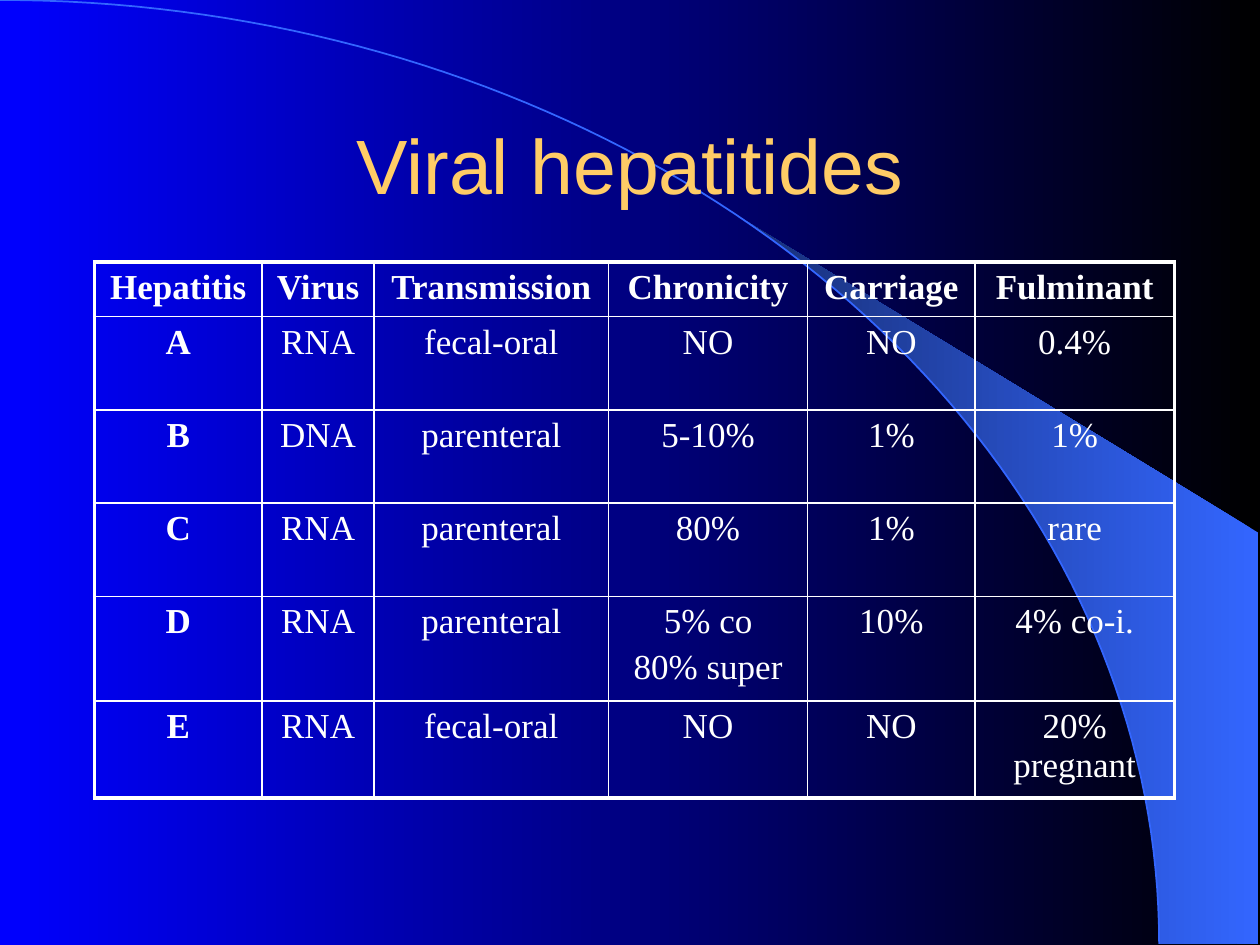
import math

import pptx
import pptx.util
from lxml import etree
from pptx.dml.color import RGBColor
from pptx.enum.text import MSO_ANCHOR, PP_ALIGN
from pptx.oxml.ns import qn
from pptx.util import Inches, Pt

BLACK = RGBColor(0, 0, 0)
BLUE = RGBColor(0, 0, 0xFF)
SKY = RGBColor(0x33, 0x66, 0xFF)
NAVY = RGBColor(0x18, 0x2F, 0x76)
GOLD = RGBColor(0xFF, 0xCC, 0x66)
WHITE = RGBColor(0xFF, 0xFF, 0xFF)

WIDE, HIGH = 9.2, 7.49  # radii of the big curve
TIP = math.asin(5.89 / WIDE)  # angle at which the beam leaves the curve

COLS = [1.33, 0.89, 1.86, 1.58, 1.33, 1.58]
ROWS = [0.43, 0.74, 0.74, 0.74, 0.83, 0.77]
DATA = [
    ["Hepatitis", "Virus", "Transmission", "Chronicity", "Carriage", "Fulminant"],
    ["A", "RNA", "fecal-oral", "NO", "NO", "0.4%"],
    ["B", "DNA", "parenteral", "5-10%", "1%", "1%"],
    ["C", "RNA", "parenteral", "80%", "1%", "rare"],
    ["D", "RNA", "parenteral", "5% co\n80% super", "10%", "4% co-i."],
    ["E", "RNA", "fecal-oral", "NO", "NO", "20% pregnant"],
]


def curve(start, steps):
    """Points on the ellipse from an angle off the top to its right end."""
    turns = [start + (math.pi / 2 - start) * i / steps for i in range(steps + 1)]
    return [(WIDE * math.sin(t), HIGH * (1 - math.cos(t))) for t in turns]


class Deck:
    """Holds the style and the current slide."""

    head = "Arial"
    body = "Times New Roman"
    inset = Inches(0.05)

    def __init__(self):
        self.file = pptx.Presentation()
        self.file.slide_width = Inches(10)
        self.file.slide_height = Inches(7.5)
        self.slide = self.file.slides.add_slide(self.file.slide_layouts[6])

    def fade(self, fill, right, left):
        fill.gradient()
        fill.gradient_angle = 180
        for stop, color in zip(fill.gradient_stops, (right, left)):
            stop.color.rgb = color

    def trace(self, points, close):
        spots = [(Inches(x), Inches(y)) for x, y in points]
        form = self.slide.shapes.build_freeform(*spots[0], scale=1.0)
        form.add_line_segments(spots[1:], close=close)
        shape = form.convert_to_shape()
        shape.shadow.inherit = False
        return shape

    def beam(self, points):
        shape = self.trace(points, True)
        self.fade(shape.fill, SKY, NAVY)
        shape.line.fill.background()

    def arc(self, points):
        shape = self.trace(points, False)
        shape.fill.background()
        shape.line.color.rgb = SKY
        shape.line.width = Pt(1)

    def style(self, para, name, size, color, bold=False):
        para.alignment = PP_ALIGN.CENTER
        font = para.font
        font.name, font.size, font.bold = name, Pt(size), bold
        font.color.rgb = color

    def pad(self, item):
        item.margin_left = item.margin_right = self.inset
        item.margin_top = item.margin_bottom = self.inset

    def title(self, text, *box):
        frame = self.slide.shapes.add_textbox(*map(Inches, box)).text_frame
        frame.word_wrap = True
        frame.vertical_anchor = MSO_ANCHOR.MIDDLE
        self.pad(frame)
        frame.text = text
        self.style(frame.paragraphs[0], self.head, 44, GOLD)

    def edge(self, cell, outer):
        """Rule all four sides, thicker where the side is on the outside."""
        props = cell._tc.get_or_add_tcPr()
        for i, (side, thick) in enumerate(zip("LRTB", outer)):
            line = etree.Element(qn(f"a:ln{side}"), w=str(Pt(2.25 if thick else 1)))
            fill = etree.SubElement(line, qn("a:solidFill"))
            etree.SubElement(fill, qn("a:srgbClr"), val=str(WHITE))
            props.insert(i, line)

    def table(self, data, left, top, cols, rows):
        box = map(Inches, (left, top, sum(cols), sum(rows)))
        grid = self.slide.shapes.add_table(len(rows), len(cols), *box).table
        grid.first_row = grid.horz_banding = False
        for col, width in zip(grid.columns, cols):
            col.width = Inches(width)
        for row, height in zip(grid.rows, rows):
            row.height = Inches(height)
        for r, line in enumerate(data):
            for c, text in enumerate(line):
                cell = grid.cell(r, c)
                cell.text = text
                cell.fill.background()
                self.pad(cell)
                for para in cell.text_frame.paragraphs:
                    self.style(para, self.body, 20, WHITE, r == 0 or c == 0)
                    para.space_before = Pt(4)
                last = (c == len(cols) - 1, r == len(rows) - 1)
                self.edge(cell, (c == 0, last[0], r == 0, last[1]))


def main():
    deck = Deck()
    deck.fade(deck.slide.background.fill, BLACK, BLUE)
    deck.beam(curve(TIP, 40) + [(9.99, HIGH), (9.99, 4.23)])
    deck.arc(curve(0, 80))
    deck.title("Viral hepatitides", 0.75, 0.67, 8.5, 1.25)
    deck.table(DATA, 0.75, 2.08, COLS, ROWS)
    deck.file.save("out.pptx")


if __name__ == "__main__":
    main()
